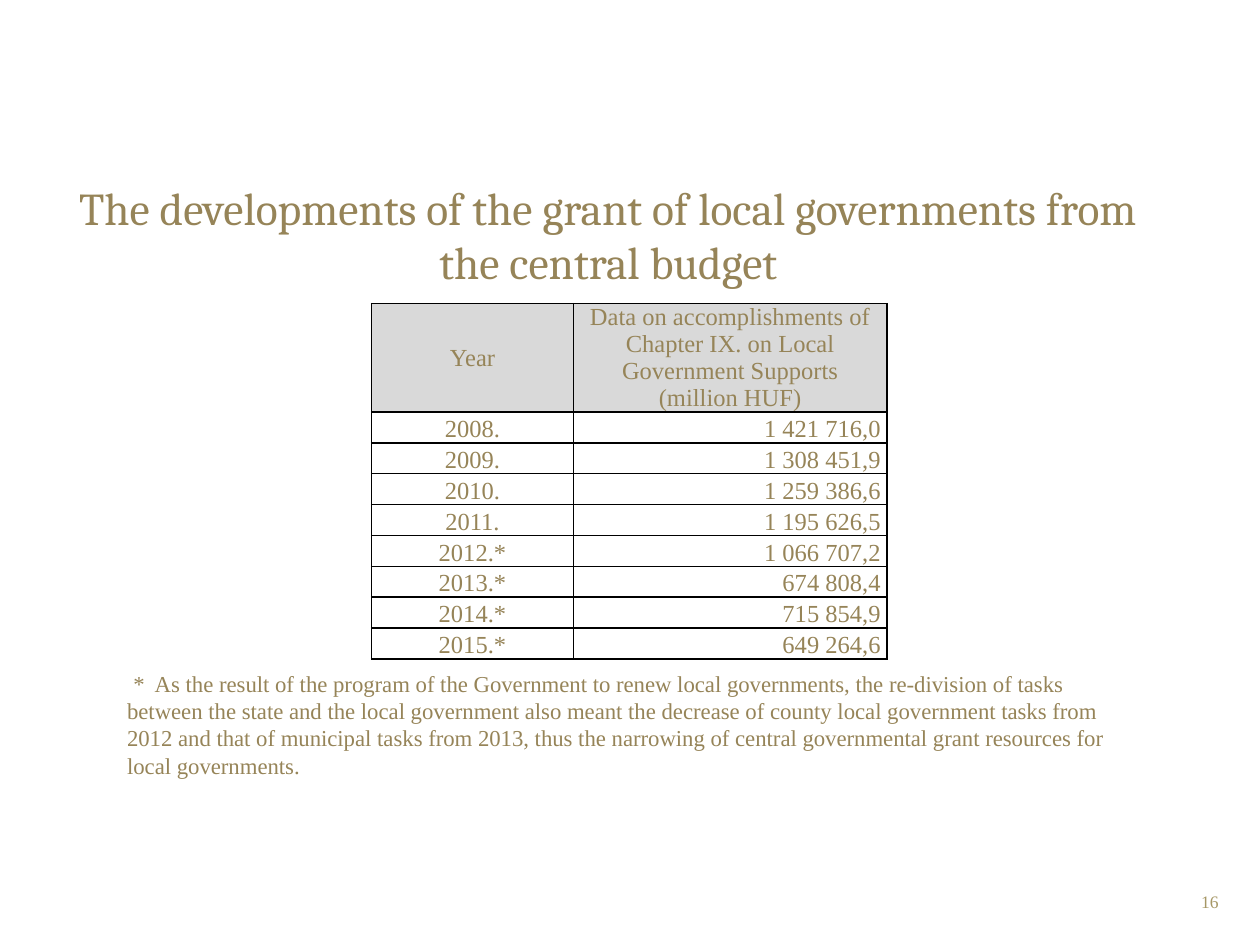
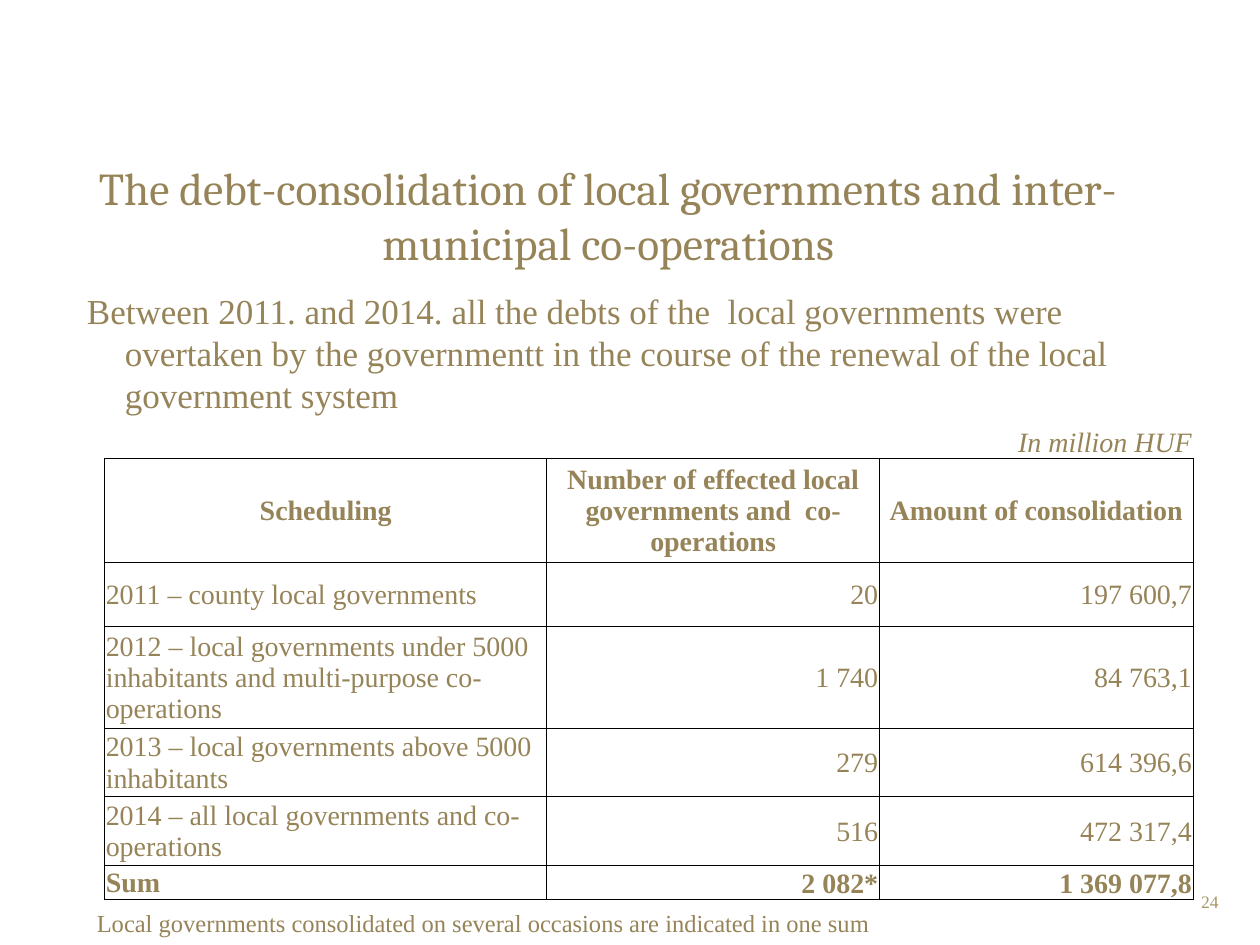
from lxml.etree import SubElement
from pptx import Presentation
from pptx.dml.color import RGBColor
from pptx.enum.text import MSO_ANCHOR, MSO_AUTO_SIZE, PP_ALIGN
from pptx.oxml.ns import qn
from pptx.util import Inches, Pt

GOLD = "968458"
PALE_GOLD = "A69765"
GREY = "D9D9D9"
BLACK = "000000"
SERIF = "Times New Roman"
TITLE_FONT = "Cambria"

LEFT, CENTER, RIGHT = PP_ALIGN.LEFT, PP_ALIGN.CENTER, PP_ALIGN.RIGHT
TOP, MIDDLE, BOTTOM = MSO_ANCHOR.TOP, MSO_ANCHOR.MIDDLE, MSO_ANCHOR.BOTTOM

GRANTS = [
    ("2008.", "1 421 716,0"),
    ("2009.", "1 308 451,9"),
    ("2010.", "1 259 386,6"),
    ("2011.", "1 195 626,5"),
    ("2012.*", "1 066 707,2"),
    ("2013.*", "674 808,4"),
    ("2014.*", "715 854,9"),
    ("2015.*", "649 264,6"),
]
GRANT_HEADINGS = (
    "Year",
    "Data on accomplishments of Chapter IX. on Local Government Supports (million HUF)",
)
GRANT_NOTE = (
    "*  As the result of the program of the Government to renew local governments, "
    "the re-division of tasks between the state and the local government also meant "
    "the decrease of county local government tasks from 2012 and that of municipal "
    "tasks from 2013, thus the narrowing of central governmental grant resources "
    "for local governments."
)
DEBT_INTRO = (
    "Between 2011. and 2014. all the debts of the  local governments were overtaken "
    "by the governmentt in the course of the renewal of the local government system"
)
DEBT_HEADINGS = (
    "Scheduling",
    "Number of effected local governments and  co-operations",
    "Amount of consolidation",
)
DEBTS = [
    ("2011 – county local governments", "20", "197 600,7"),
    ("2012 – local governments under 5000 inhabitants and multi-purpose co-operations",
     "1 740", "84 763,1"),
    ("2013 – local governments above 5000 inhabitants", "279", "614 396,6"),
    ("2014 – all local governments and co-operations", "516", "472 317,4"),
]
DEBT_SUM = ("Sum", "2 082*", "1 369 077,8")
DEBT_NOTE = "Local governments consolidated on several occasions are indicated in one sum"


def color(value):
    return RGBColor.from_string(value)


def write(paragraph, text, size, align=LEFT, font=SERIF, ink=GOLD, bold=False, italic=False):
    paragraph.alignment = align
    paragraph.space_before = Pt(0)
    if not text:
        SubElement(paragraph._p, qn("a:endParaRPr"), sz=str(size * 100))
        return
    run = paragraph.add_run()
    run.text = text
    values = {"name": font, "size": Pt(size), "bold": bold, "italic": italic}
    for name, value in values.items():
        setattr(run.font, name, value)
    run.font.color.rgb = color(ink)


def indent(paragraph, margin, first_line):
    properties = paragraph._p.get_or_add_pPr()
    properties.set("marL", str(Inches(margin)))
    properties.set("indent", str(Inches(first_line)))
    SubElement(properties, qn("a:buNone"))


def place(holder, box, anchor):
    for name, length in zip(("left", "top", "width", "height"), box):
        setattr(holder, name, Inches(length))
    frame = holder.text_frame
    values = {"word_wrap": True, "auto_size": MSO_AUTO_SIZE.NONE, "vertical_anchor": anchor}
    for name, value in values.items():
        setattr(frame, name, value)
    return frame.paragraphs[0]


def add_title(slide, text, box):
    write(place(slide.shapes.title, box, MIDDLE), text, 26, CENTER, TITLE_FONT)


def add_text(slide, text, box, size, anchor=TOP, first_line=0, **style):
    paragraph = place(slide.shapes.add_textbox(0, 0, 0, 0), box, anchor)
    indent(paragraph, 0, first_line)
    write(paragraph, text, size, **style)


def add_page_number(slide, number):
    add_text(slide, str(number), (7.44, 7.02, 2.33, 0.4), 10, align=RIGHT, ink=PALE_GOLD)


def draw_borders(cell, width, sides):
    properties = cell._tc.get_or_add_tcPr()
    for side in "LRTB":
        line = SubElement(properties, qn(f"a:ln{side}"), w=str(Pt(width)))
        if side in sides:
            fill = SubElement(line, qn("a:solidFill"))
            SubElement(fill, qn("a:srgbClr"), val=BLACK)
        else:
            SubElement(line, qn("a:noFill"))


def add_grid(slide, corner, widths, heights):
    left, top = corner
    table = slide.shapes.add_table(
        len(heights), len(widths), Inches(left), Inches(top),
        Inches(sum(widths)), Inches(sum(heights))).table
    table.first_row = table.horz_banding = False
    for column, width in zip(table.columns, widths):
        column.width = Inches(width)
    for row, height in zip(table.rows, heights):
        row.height = Inches(height)
    return table


def fill_row(table, index, texts, aligns, anchors, margins, size, line,
             sides="LRTB", shade=None, **style):
    for cell, text, align, anchor in zip(table.rows[index].cells, texts, aligns, anchors):
        names = ("margin_left", "margin_top", "margin_right", "margin_bottom")
        for name, margin in zip(names, margins):
            setattr(cell, name, Inches(margin))
        cell.vertical_anchor = anchor
        draw_borders(cell, line, sides)
        if shade:
            cell.fill.solid()
            cell.fill.fore_color.rgb = color(shade)
        else:
            cell.fill.background()
        write(cell.text_frame.paragraphs[0], text, size, align, **style)


def add_grant_table(slide):
    header_height, total_height = 0.86, 2.82
    row_height = (total_height - header_height) / len(GRANTS)
    table = add_grid(slide, (2.95, 2.41), (1.6, 2.49),
                     [header_height] + [row_height] * len(GRANTS))
    look = {"margins": (0.05, 0, 0.05, 0), "size": 14, "line": 1}
    fill_row(table, 0, GRANT_HEADINGS, [CENTER] * 2, [MIDDLE] * 2, shade=GREY, **look)
    for index, grant in enumerate(GRANTS, 1):
        fill_row(table, index, grant, (CENTER, RIGHT), [BOTTOM] * 2, **look)


def add_debt_table(slide):
    table = add_grid(slide, (0.83, 3.36), (3.51, 2.64, 2.49),
                     (0.27, 0.82, 0.51, 0.81, 0.54, 0.55, 0.27))
    look = {"margins": (0.01, 0.01, 0.01, 0), "size": 16, "line": 0.5}
    amounts = (LEFT, RIGHT, RIGHT)
    fill_row(table, 0, ("", "", "In million HUF"), amounts, [BOTTOM] * 3,
             sides="B", italic=True, **look)
    fill_row(table, 1, DEBT_HEADINGS, [CENTER] * 3, [MIDDLE] * 3, bold=True, **look)
    for index, debt in enumerate(DEBTS, 2):
        fill_row(table, index, debt, amounts, [MIDDLE] * 3, **look)
    fill_row(table, len(DEBTS) + 2, DEBT_SUM, amounts, (MIDDLE, BOTTOM, BOTTOM),
             bold=True, **look)


def build_grants(deck):
    slide = deck.slides.add_slide(deck.slide_layouts[5])
    add_page_number(slide, 16)
    add_title(slide, "The developments of the grant of local governments from the central budget",
              (0.33, 1.31, 9, 1.1))
    add_grant_table(slide)
    add_text(slide, GRANT_NOTE, (0.91, 5.07, 8.19, 1.35), 13, MIDDLE, first_line=0.05)


def build_debts(deck):
    slide = deck.slides.add_slide(deck.slide_layouts[1])
    add_page_number(slide, 24)
    add_title(slide, "The debt-consolidation of local governments and inter-municipal co-operations",
              (0.33, 1.08, 9, 1.25))
    intro = place(slide.placeholders[1], (0.59, 2.25, 8.75, 1.11), TOP)
    indent(intro, 0.3, -0.3)
    write(intro, DEBT_INTRO, 20)
    add_debt_table(slide)
    add_text(slide, DEBT_NOTE, (0.62, 7.16, 8.66, 0.34), 14, first_line=0.05)


def main():
    deck = Presentation()
    deck.slide_width, deck.slide_height = Inches(10), Inches(7.5)
    build_grants(deck)
    build_debts(deck)
    deck.save("out.pptx")


if __name__ == "__main__":
    main()
